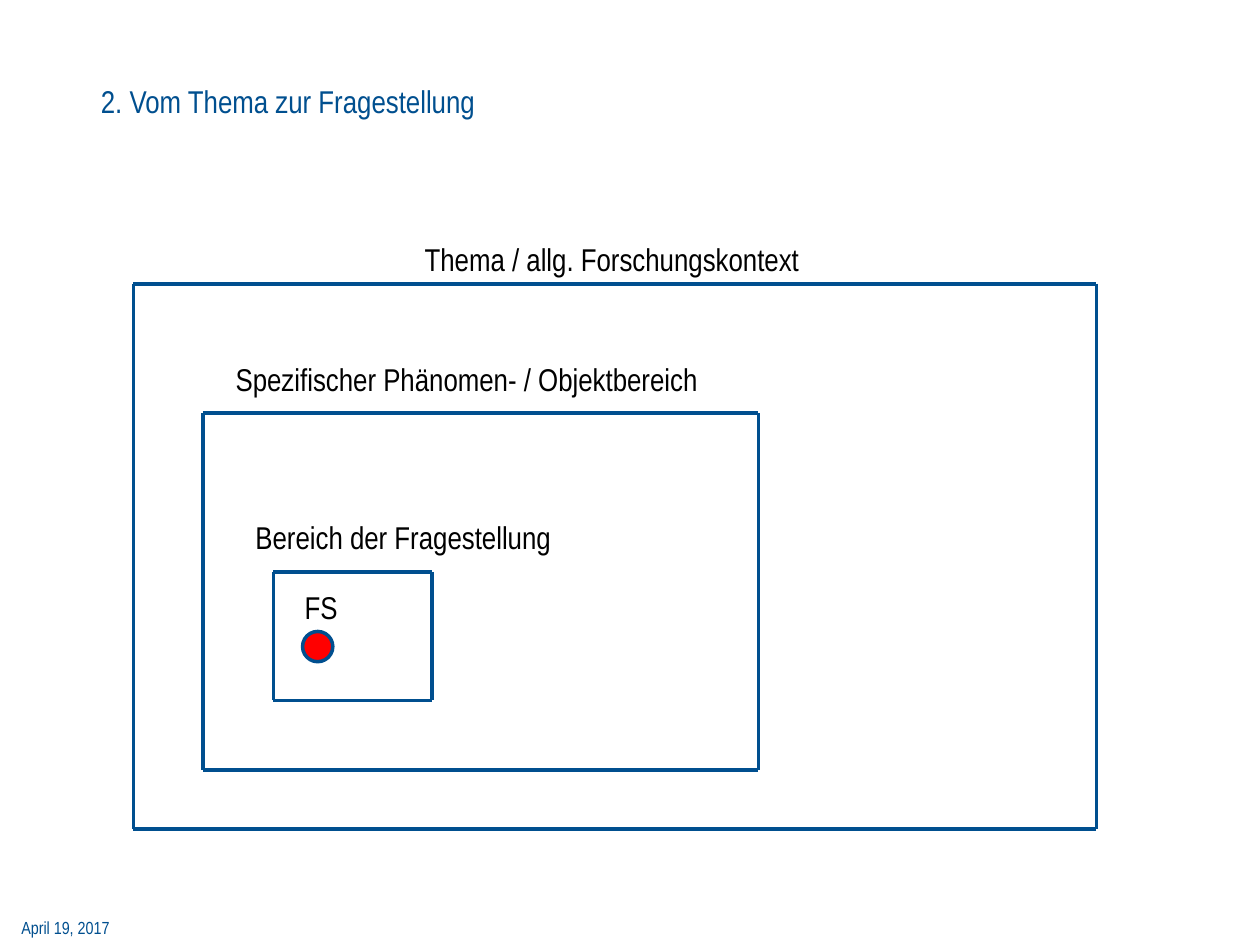
import pptx
import pptx.dml.color
import pptx.enum.shapes
import pptx.enum.text
import pptx.util
from lxml import etree
from pptx.util import Cm

FONT = "Arial Narrow"
BLUE = "004F8F"
BLACK = "000000"
RED = "FF0000"


def rgb(hex_colour):
    return pptx.dml.color.RGBColor.from_string(hex_colour)


def set_text(frame, text, size, colour):
    frame.text = text
    paragraph = frame.paragraphs[0]
    paragraph.alignment = pptx.enum.text.PP_ALIGN.LEFT
    font = paragraph.runs[0].font
    font.name = FONT
    font.size = pptx.util.Pt(size)
    font.color.rgb = rgb(colour)


def set_outline(line):
    line.color.rgb = rgb(BLUE)
    line.width = pptx.util.Pt(2)


def place_title(slide, text):
    title = slide.shapes.title
    title.left, title.top = Cm(1.78), Cm(0.33)
    title.width, title.height = Cm(18.34), Cm(2.21)
    frame = title.text_frame
    frame.auto_size = pptx.enum.text.MSO_AUTO_SIZE.NONE
    frame.vertical_anchor = pptx.enum.text.MSO_ANCHOR.BOTTOM
    set_text(frame, text, 18, BLUE)


def add_label(slide, text, left, top, width, height=1.02, size=18, colour=BLACK):
    label = slide.shapes.add_textbox(Cm(left), Cm(top), Cm(width), Cm(height))
    frame = label.text_frame
    frame.word_wrap = False
    frame.auto_size = pptx.enum.text.MSO_AUTO_SIZE.SHAPE_TO_FIT_TEXT
    set_text(frame, text, size, colour)
    return frame


def add_date(slide, text):
    frame = add_label(slide, text, 0.43, 18.49, 2.11, 0.43, size=10, colour=BLUE)
    frame.margin_left = frame.margin_right = 0
    frame.margin_top = frame.margin_bottom = 0


def add_side(slide, x1, y1, x2, y2):
    side = slide.shapes.add_connector(
        pptx.enum.shapes.MSO_CONNECTOR.STRAIGHT, Cm(x1), Cm(y1), Cm(x2), Cm(y2))
    set_outline(side.line)
    etree.SubElement(side._element.spPr, pptx.oxml.ns.qn("a:effectLst"))


def add_frame(slide, left, top, right, bottom):
    """Draw an open frame from four separate lines."""
    for y in (top, bottom):
        add_side(slide, left, y, right, y)
    for x in (left, right):
        add_side(slide, x, top, x, bottom)


def add_dot(slide, left, top, diameter):
    dot = slide.shapes.add_shape(
        pptx.enum.shapes.MSO_SHAPE.OVAL,
        Cm(left), Cm(top), Cm(diameter), Cm(diameter))
    dot.shadow.inherit = False
    dot.fill.solid()
    dot.fill.fore_color.rgb = rgb(RED)
    set_outline(dot.line)


def main():
    presentation = pptx.Presentation()
    presentation.slide_width, presentation.slide_height = Cm(25.4), Cm(19.05)
    slide = presentation.slides.add_slide(presentation.slide_layouts[5])

    add_date(slide, "April 19, 2017")
    place_title(slide, "2. Vom Thema zur Fragestellung")

    # Each scope: frame edges (left, top, right, bottom), label and its place
    scopes = [
        ((2.69, 5.72, 22.1, 16.71),
         "Thema / allg. Forschungskontext", (8.31, 4.72, 8.15)),
        ((4.09, 8.33, 15.29, 15.52),
         "Spezifischer Phänomen- / Objektbereich", (4.5, 7.14, 9.93)),
        ((5.51, 11.53, 8.71, 14.12),
         "Bereich der Fragestellung", (4.9, 10.31, 6.53)),
    ]
    for edges, name, place in scopes:
        add_frame(slide, *edges)
        add_label(slide, name, *place)

    add_dot(slide, 6.1, 12.73, 0.61)
    add_label(slide, "FS", 5.89, 11.73, 1.19)

    presentation.save("out.pptx")


if __name__ == "__main__":
    main()
